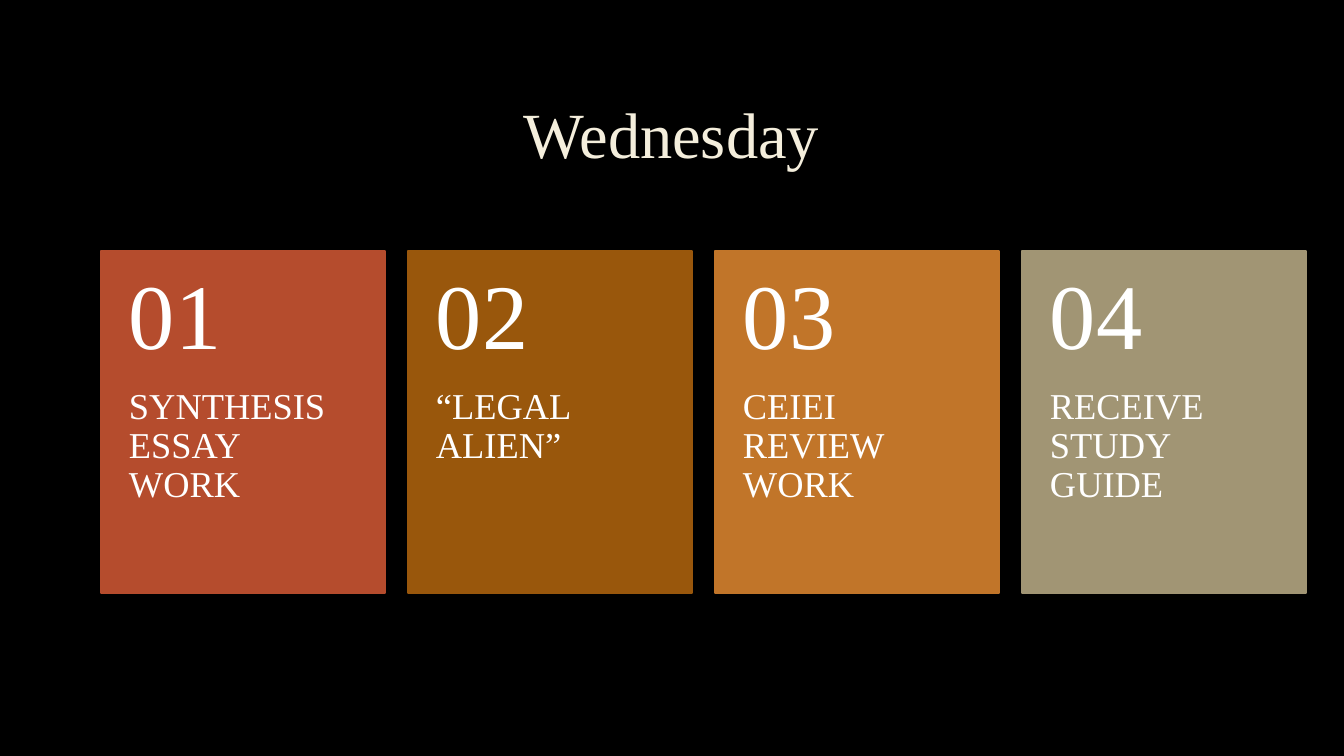
from pptx import Presentation
from pptx.dml.color import RGBColor
from pptx.enum.shapes import MSO_SHAPE
from pptx.enum.text import MSO_ANCHOR, PP_ALIGN
from pptx.util import Pt

RECT = MSO_SHAPE.RECTANGLE
TOP, MIDDLE = MSO_ANCHOR.TOP, MSO_ANCHOR.MIDDLE
LEFT, CENTER = PP_ALIGN.LEFT, PP_ALIGN.CENTER

THEME = {
    "font": "Times New Roman",
    "background": "000000",
    "title": "F4EEDC",
    "text": "FFFFFF",
    "title_size": 46,
    "number_size": 66,
    "label_size": 26,
    "border": 1.25,
}


def px(n):
    return round(n * 914400 / 100.8)


def add_text(shapes, box, text, size, color, anchor, align, insets):
    tf = shapes.add_textbox(*map(px, box)).text_frame
    left, top, right, bottom = map(px, insets)
    frame_format = {
        "word_wrap": True, "vertical_anchor": anchor,
        "margin_left": left, "margin_top": top,
        "margin_right": right, "margin_bottom": bottom,
    }
    for name, value in frame_format.items():
        setattr(tf, name, value)
    p = tf.paragraphs[0]
    p.alignment = align
    p.line_spacing = 0.9
    r = p.add_run()
    r.text = text
    for name, value in {"name": THEME["font"], "size": Pt(size)}.items():
        setattr(r.font, name, value)
    r.font.color.rgb = RGBColor.from_string(color)


prs = Presentation()
prs.slide_width, prs.slide_height = px(1344), px(756)
s = prs.slides.add_slide(prs.slide_layouts[6])
s.background.fill.solid()
s.background.fill.fore_color.rgb = RGBColor.from_string(THEME["background"])

add_text(s.shapes, (101, 68, 1141, 139), "Wednesday", THEME["title_size"],
         THEME["title"], MIDDLE, CENTER, (10, 5, 10, 5))

CARDS = [
    ("SYNTHESIS ESSAY WORK", "B54C2D"),
    ("“LEGAL ALIEN”", "99570C"),
    ("CEIEI REVIEW WORK", "C17529"),
    ("RECEIVE STUDY GUIDE", "A19574"),
]
CARD_LEFT, CARD_TOP, CARD_W, CARD_H = 101, 251, 284, 342
PITCH, NUMBER_H = 307, 137

cards = s.shapes.add_group_shape().shapes
for i, (label, color) in enumerate(CARDS):
    x = CARD_LEFT + i * PITCH
    sp = cards.add_shape(RECT, px(x), px(CARD_TOP), px(CARD_W), px(CARD_H))
    sp.shadow.inherit = False
    sp.fill.solid()
    sp.fill.fore_color.rgb = RGBColor.from_string(color)
    sp.line.color.rgb = RGBColor.from_string(color)
    sp.line.width = Pt(THEME["border"])
    add_text(cards, (x, CARD_TOP + NUMBER_H, CARD_W, CARD_H - NUMBER_H), label,
             THEME["label_size"], THEME["text"], TOP, LEFT, (28, 0, 28, 36))
    add_text(cards, (x, CARD_TOP, CARD_W, NUMBER_H), f"{i + 1:02}",
             THEME["number_size"], THEME["text"], MIDDLE, LEFT, (28, 18, 28, 18))

prs.save("out.pptx")
